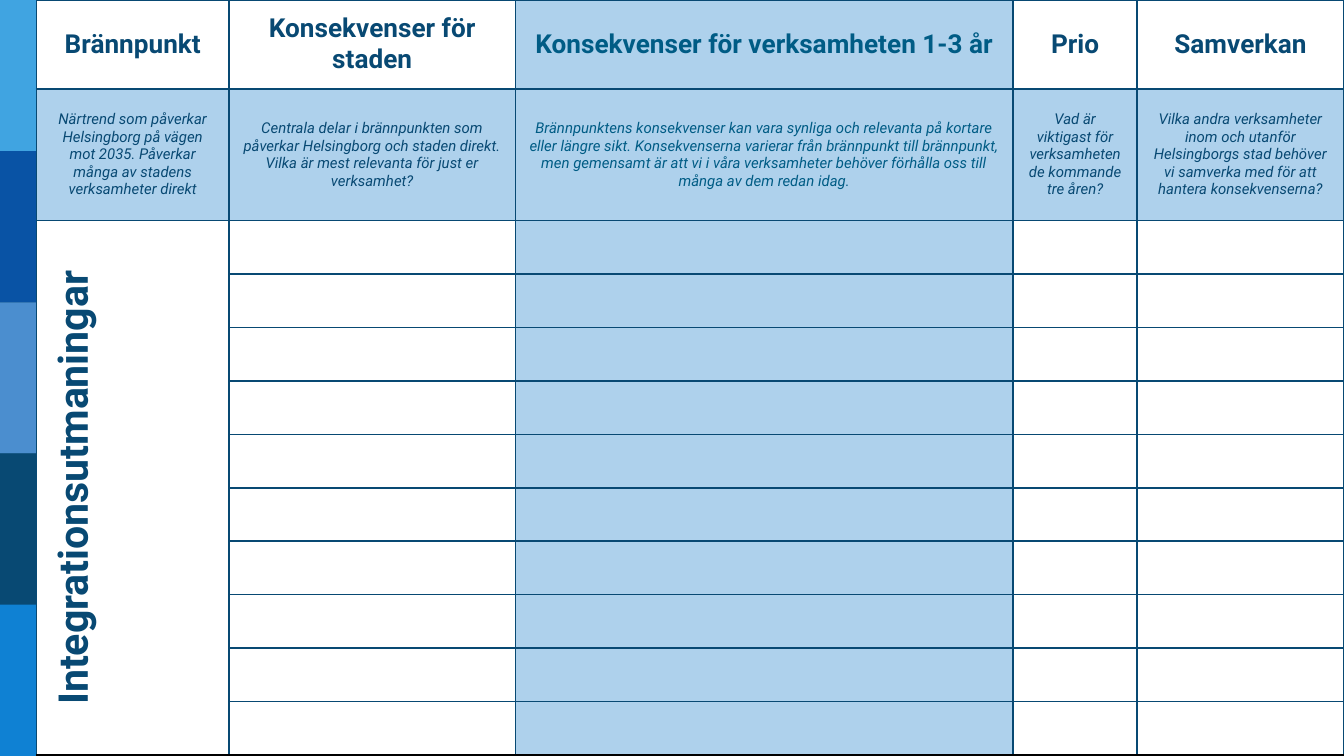
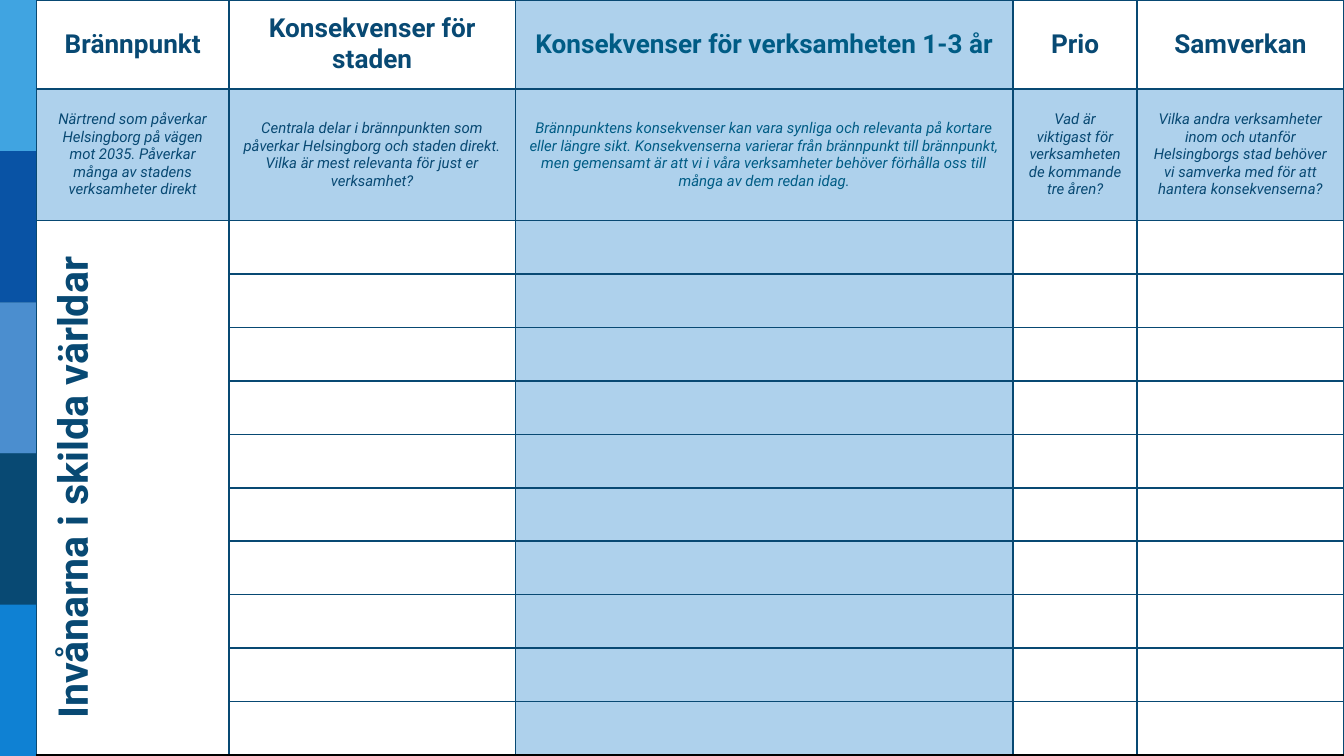
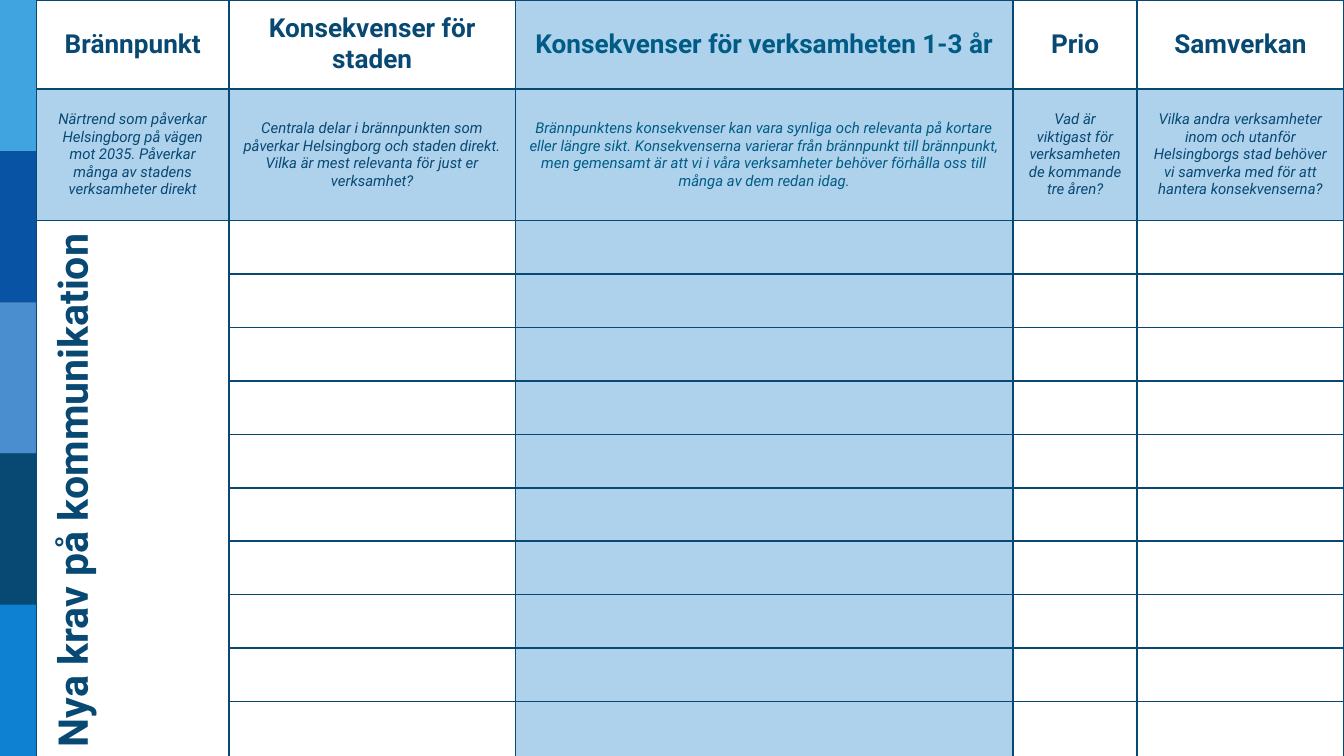
from lxml import etree
from pptx import Presentation, util as u
from pptx.dml import color
from pptx.enum import shapes, text
from pptx.oxml import ns

# Shared look
FONT = "Roboto"
NAVY, TEAL, PALE, WHITE, BLACK = "084973", "005C85", "AED1EC", "FFFFFF", "000000"
BAND_COLOURS = ["40A4E1", "0953A5", "4B8ECF", NAVY, "0F81D3"]
BAND_WIDTH = u.Cm(0.69)
COLUMN_WIDTHS = [3.64, 5.41, 9.41, 2.34, 3.91]
ANSWER_ROWS = 10
ROW_HEIGHTS = [1.68, 2.49] + [1.01] * ANSWER_ROWS
FOCUS_COLUMN = 2

HEADING = {"size": u.Pt(14), "bold": True, "italic": False}
HINT = {"size": u.Pt(8), "bold": False, "italic": True}
TREND = {"size": u.Pt(22), "bold": True, "italic": False}

# Wording
HEADINGS = [
    "Brännpunkt",
    "Konsekvenser för staden",
    "Konsekvenser för verksamheten 1-3 år",
    "Prio",
    "Samverkan",
]
HINTS = [
    "Närtrend som påverkar Helsingborg på vägen mot 2035. "
    "Påverkar många av stadens verksamheter direkt",
    "Centrala delar i brännpunkten som påverkar Helsingborg och staden direkt. "
    "Vilka är mest relevanta för just er verksamhet?",
    "Brännpunktens konsekvenser kan vara synliga och relevanta på kortare eller "
    "längre sikt. Konsekvenserna varierar från brännpunkt till brännpunkt, men "
    "gemensamt är att vi i våra verksamheter behöver förhålla oss till många av "
    "dem redan idag.",
    "Vad är viktigast för verksamheten de kommande tre åren?",
    "Vilka andra verksamheter inom och utanför Helsingborgs stad behöver vi "
    "samverka med för att hantera konsekvenserna?",
]
TRENDS = [
    "Integrationsutmaningar",
    "Invånarna i skilda världar",
    "Nya krav på kommunikation",
]


def rgb(value):
    return color.RGBColor.from_string(value)


def set_fill(target, value):
    target.fill.solid()
    target.fill.fore_color.rgb = rgb(value)


def add_bands(slide, slide_height):
    """Stack equal colour bands along the left edge."""
    height = slide_height // len(BAND_COLOURS)
    for index, value in enumerate(BAND_COLOURS):
        band = slide.shapes.add_shape(
            shapes.MSO_SHAPE.RECTANGLE, 0, index * height, BAND_WIDTH, height)
        band.shadow.inherit = False
        set_fill(band, value)
        band.line.fill.background()


def set_borders(cell, bottom):
    properties = cell._tc.get_or_add_tcPr()
    sides = {"lnL": NAVY, "lnR": NAVY, "lnT": NAVY, "lnB": bottom}
    for position, (side, value) in enumerate(sides.items()):
        line = etree.Element(ns.qn(f"a:{side}"), w=str(u.Pt(1)))
        fill = etree.SubElement(line, ns.qn("a:solidFill"))
        etree.SubElement(fill, ns.qn("a:srgbClr"), val=value)
        properties.insert(position, line)


def style_cell(cell, fill, bottom):
    set_fill(cell, fill)
    set_borders(cell, bottom)
    cell.vertical_anchor = text.MSO_ANCHOR.MIDDLE
    for side in ("left", "right", "top", "bottom"):
        setattr(cell, f"margin_{side}", u.Cm(0.25))
    # Small type keeps empty rows at their set height
    cell.text_frame.paragraphs[0]._p.get_or_add_endParaRPr().set("sz", "800")


def write_cell(cell, wording, values, colour=NAVY):
    paragraph = cell.text_frame.paragraphs[0]
    paragraph.alignment = text.PP_ALIGN.CENTER
    run = paragraph.add_run()
    run.text = wording
    for name, value in values.items():
        setattr(run.font, name, value)
    run.font.name = FONT
    run.font.color.rgb = rgb(colour)


def add_worksheet(slide, trend):
    """Add the table with headings, hints and empty answer rows."""
    row_count, column_count = len(ROW_HEIGHTS), len(COLUMN_WIDTHS)
    table = slide.shapes.add_table(
        row_count, column_count, BAND_WIDTH, 0,
        u.Cm(sum(COLUMN_WIDTHS)), u.Cm(sum(ROW_HEIGHTS))).table
    table.first_row = table.horz_banding = False
    for column, width in zip(table.columns, COLUMN_WIDTHS):
        column.width = u.Cm(width)
    for row, height in zip(table.rows, ROW_HEIGHTS):
        row.height = u.Cm(height)

    for row in range(row_count):
        for column in range(column_count):
            fill = PALE if row == 1 or column == FOCUS_COLUMN else WHITE
            at_bottom = row == row_count - 1 or (row == 2 and column == 0)
            style_cell(table.cell(row, column), fill, BLACK if at_bottom else NAVY)

    for row, (wordings, values) in enumerate([(HEADINGS, HEADING), (HINTS, HINT)]):
        for column, wording in enumerate(wordings):
            colour = TEAL if column == FOCUS_COLUMN else NAVY
            write_cell(table.cell(row, column), wording, values, colour)

    # The trend runs upwards beside all answer rows
    trend_cell = table.cell(2, 0)
    trend_cell.merge(table.cell(row_count - 1, 0))
    trend_cell._tc.get_or_add_tcPr().set("vert", "vert270")
    write_cell(trend_cell, trend, TREND)


def main():
    presentation = Presentation()
    presentation.slide_width = u.Cm(25.4)
    presentation.slide_height = u.Cm(14.29)
    for trend in TRENDS:
        slide = presentation.slides.add_slide(presentation.slide_layouts[6])
        set_fill(slide.background, NAVY)
        add_bands(slide, presentation.slide_height)
        add_worksheet(slide, trend)
    presentation.save("out.pptx")


if __name__ == "__main__":
    main()
